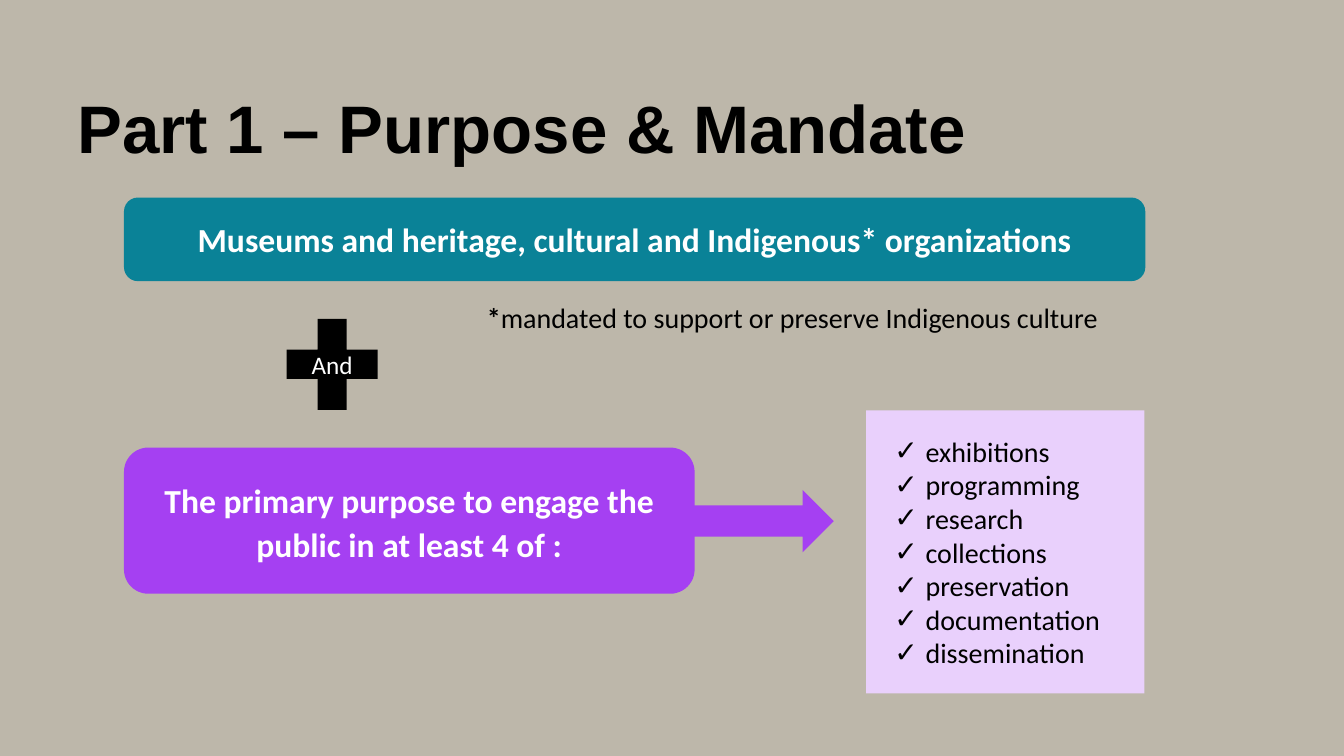
from dataclasses import dataclass

from lxml.etree import SubElement
from pptx import Presentation
from pptx.dml.color import RGBColor
from pptx.enum.shapes import MSO_SHAPE as Preset
from pptx.enum.text import MSO_ANCHOR as Anchor, MSO_AUTO_SIZE as AutoSize, PP_ALIGN as Align
from pptx.oxml.ns import qn
from pptx.slide import Slide
from pptx.text.text import Font
from pptx.util import Inches, Pt

COLORS = {
    "background": "BDB7AA",
    "black": "000000",
    "white": "FFFFFF",
    "teal": "0A8297",
    "purple": "A540F2",
    "lilac": "E9D0FC",
}
ACTIVITIES = [
    "exhibitions",
    "programming",
    "research",
    "collections",
    "preservation",
    "documentation",
    "dissemination",
]


@dataclass
class Block:
    preset: Preset
    left: float
    top: float
    width: float
    height: float
    color: str
    text: str = ""
    size: int = 24
    bold: bool = True
    line_spacing: float = 1.0
    space_after: int = 0


BLOCKS = [
    Block(Preset.ROUNDED_RECTANGLE, 1.23, 1.96, 10.13, 0.83, "teal",
          "Museums and heritage, cultural and Indigenous* organizations"),
    Block(Preset.MATH_PLUS, 2.68, 3, 1.23, 1.23, "black", "And", size=18, bold=False),
    Block(Preset.ROUNDED_RECTANGLE, 1.23, 4.44, 5.66, 1.45, "purple",
          "The primary purpose to engage the public in at least 4 of :",
          line_spacing=1.07, space_after=8),
    Block(Preset.RIGHT_ARROW, 6.8, 4.86, 1.47, 0.62, "purple"),
]


def rgb(name: str) -> RGBColor:
    return RGBColor.from_string(COLORS[name])


def style_font(font: Font, size: int, color: str, bold: bool = False, name: str = "Calibri") -> None:
    font.name = name
    font.size = Pt(size)
    font.bold = bold
    font.color.rgb = rgb(color)


def place(shape, left: float, top: float, width: float, height: float) -> None:
    shape.left, shape.top = Inches(left), Inches(top)
    shape.width, shape.height = Inches(width), Inches(height)


def add_title(slide: Slide) -> None:
    title = slide.shapes.title
    place(title, 0.77, 0.8, 12.04, 1.16)
    frame = title.text_frame
    frame.text = "Part 1 – Purpose & Mandate"
    frame.auto_size = AutoSize.NONE
    frame.vertical_anchor = Anchor.MIDDLE
    frame.margin_left = frame.margin_top = frame.margin_right = 0
    frame.margin_bottom = Inches(0.28)
    paragraph = frame.paragraphs[0]
    paragraph.alignment = Align.LEFT
    paragraph.line_spacing = Pt(60)
    style_font(paragraph.runs[0].font, 48, "black", True, "Arial")


def add_block(slide: Slide, block: Block) -> None:
    shape = slide.shapes.add_shape(block.preset, Inches(block.left), Inches(block.top),
                                   Inches(block.width), Inches(block.height))
    shape.shadow.inherit = False
    shape.fill.solid()
    shape.fill.fore_color.rgb = rgb(block.color)
    shape.line.fill.background()
    if not block.text:
        return
    frame = shape.text_frame
    frame.text = block.text
    frame.word_wrap = True
    frame.vertical_anchor = Anchor.MIDDLE
    paragraph = frame.paragraphs[0]
    paragraph.alignment = Align.CENTER
    paragraph.line_spacing = block.line_spacing
    paragraph.space_after = Pt(block.space_after)
    style_font(paragraph.runs[0].font, block.size, "white", block.bold)


def add_footnote(slide: Slide) -> None:
    footnote = slide.shapes.add_textbox(Inches(4.53), Inches(2.93), Inches(6.66), Inches(0.44))
    footnote.text_frame.word_wrap = True
    paragraph = footnote.text_frame.paragraphs[0]
    paragraph.alignment = Align.CENTER
    for text, bold in [("*", True), ("mandated to support or preserve Indigenous culture", False)]:
        run = paragraph.add_run()
        run.text = text
        style_font(run.font, 20, "black", bold)


def add_checklist(slide: Slide) -> None:
    checklist = slide.placeholders[1]
    place(checklist, 8.59, 4.07, 2.76, 2.81)
    checklist.fill.solid()
    checklist.fill.fore_color.rgb = rgb("lilac")
    frame = checklist.text_frame
    frame.text = "\n".join(ACTIVITIES)
    frame.auto_size = AutoSize.NONE
    frame.vertical_anchor = Anchor.MIDDLE
    for paragraph in frame.paragraphs:
        paragraph.space_before = Pt(0)
        properties = paragraph._p.get_or_add_pPr()
        properties.set("marL", str(Inches(0.49)))
        properties.set("indent", str(Inches(-0.31)))
        SubElement(properties, qn("a:buChar")).set("char", "✓")
        style_font(paragraph.runs[0].font, 20, "black")


def main() -> None:
    presentation = Presentation()
    presentation.slide_width, presentation.slide_height = Inches(13.33), Inches(7.5)
    slide = presentation.slides.add_slide(presentation.slide_layouts[1])
    slide.background.fill.solid()
    slide.background.fill.fore_color.rgb = rgb("background")
    add_title(slide)
    for block in BLOCKS:
        add_block(slide, block)
    add_footnote(slide)
    add_checklist(slide)
    presentation.save("out.pptx")


if __name__ == "__main__":
    main()
